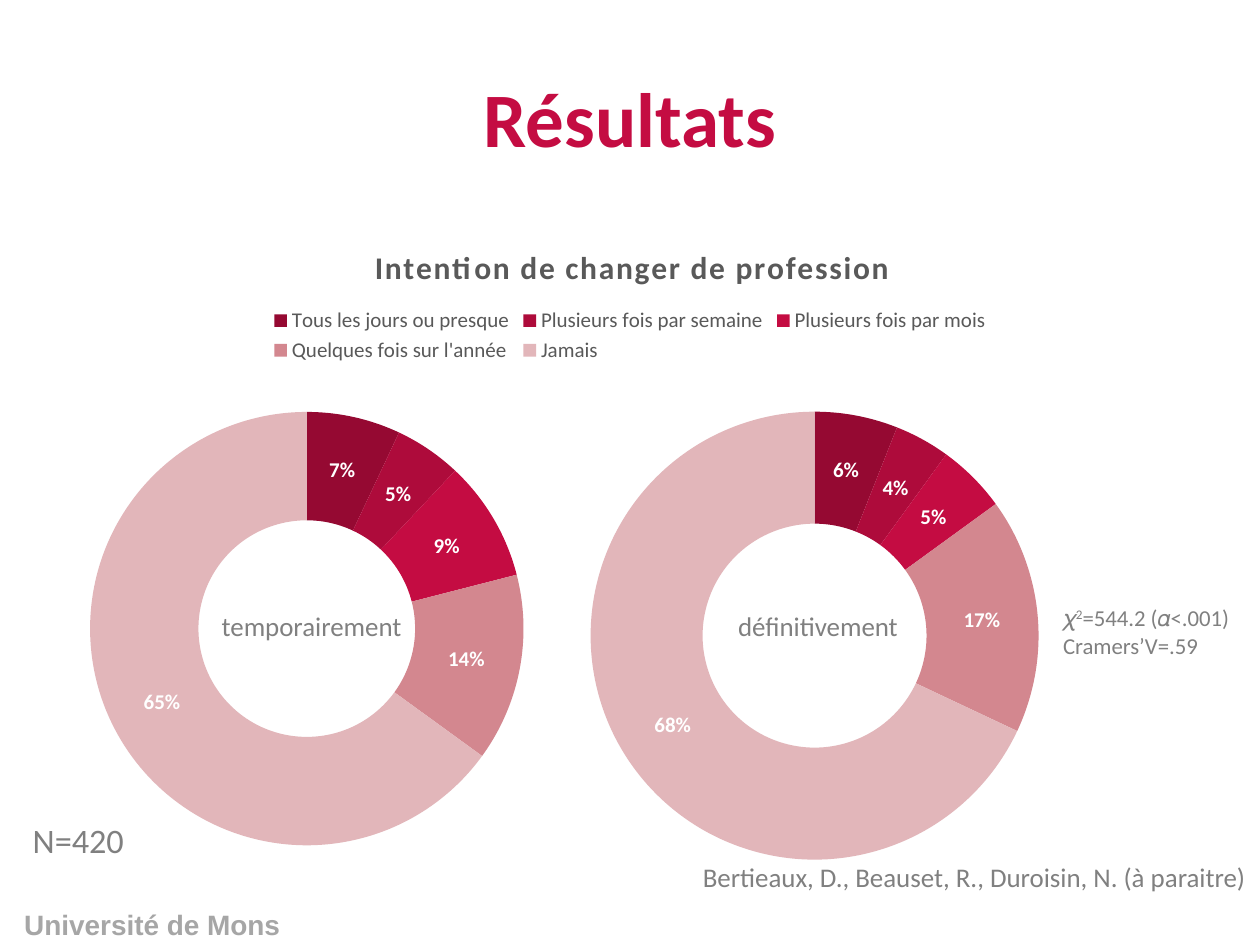
from lxml import etree
from pptx import Presentation
from pptx import util as u
from pptx.chart.data import CategoryChartData
from pptx.dml.color import RGBColor
from pptx.enum import chart as ch, text as tx
from pptx.oxml import parse_xml
from pptx.oxml.ns import nsdecls, qn

INK = {"red": "C40C42", "gray": "808080", "dark": "595959", "pale": "A6A6A6",
       "white": "FFFFFF", "black": "000000"}
RINGS = ["950932", "AE0B3B", "C40C42", "D3878F", "E2B6BA"]
NAMES = ["Tous les jours ou presque", "Plusieurs fois par semaine",
         "Plusieurs fois par mois", "Quelques fois sur l'année", "Jamais"]


def style(font, size, ink, bold=False, face="Calibri"):
    """Set the look of a font."""
    font.name, font.size, font.bold = face, u.Pt(size), bold
    font.color.rgb = RGBColor.from_string(INK[ink])


def write(frame, lines, size=15.4, ink="gray", bold=False, face="Calibri",
          align=None, gap=None):
    """Fill a frame with lines, each a list of (text, baseline) runs."""
    for i, line in enumerate(lines):
        para = frame.paragraphs[0] if i == 0 else frame.add_paragraph()
        para.alignment = align
        if gap:
            para.line_spacing = gap
        for words, base in line:
            run = para.add_run()
            run.text = words
            style(run.font, size, ink, bold, face)
            if base:
                run.font._element.set("baseline", str(base))


def place(node, x, y, w=None, h=None, inner=False):
    """Give a chart part a manual layout in fractions of the chart."""
    for old in node.findall(qn("c:layout")):
        node.remove(old)
    bits = [("layoutTarget", "inner")] if inner else []
    bits += [("xMode", "edge"), ("yMode", "edge"), ("x", x), ("y", y)]
    if w:
        bits += [("w", w), ("h", h)]
    lay = etree.Element(qn("c:layout"))
    man = etree.SubElement(lay, qn("c:manualLayout"))
    for tag, val in bits:
        etree.SubElement(man, qn("c:" + tag)).set("val", str(val))
    if inner:
        node.insert(0, lay)
    else:
        node[0].addnext(lay)


class Deck:
    """Hold the presentation and its current slide."""

    def __init__(self):
        """Open a deck with one title-only slide."""
        self.prs = Presentation()
        self.prs.slide_width, self.prs.slide_height = u.Cm(25.4), u.Cm(19.05)
        self.slide = self.prs.slides.add_slide(self.prs.slide_layouts[5])

    def title(self, words, box):
        """Move and fill the title."""
        head = self.slide.shapes.title
        head.left, head.top, head.width, head.height = map(u.Cm, box)
        head.text_frame.vertical_anchor = tx.MSO_ANCHOR.MIDDLE
        write(head.text_frame, [[(words, 0)]], size=44, ink="red", bold=True,
              align=tx.PP_ALIGN.CENTER)

    def text(self, lines, box, wrap=False, **look):
        """Add a text box."""
        frame = self.slide.shapes.add_textbox(*map(u.Cm, box)).text_frame
        frame.word_wrap = wrap
        if isinstance(lines, str):
            lines = [[(lines, 0)]]
        write(frame, lines, **look)

    def ring(self, names, vals, box, plot):
        """Add a doughnut chart and return it."""
        data = CategoryChartData()
        data.categories = names
        data.add_series("Series 1", vals)
        chart = self.slide.shapes.add_chart(
            ch.XL_CHART_TYPE.DOUGHNUT, *map(u.Cm, box), data).chart
        style(chart.font, 10, "black")
        chart.has_title = chart.has_legend = False
        part = chart.plots[0]
        part.vary_by_categories = True
        for hole in part._element.iter(qn("c:holeSize")):
            hole.set("val", "50")
        for i, tint in enumerate(RINGS):
            look = part.series[0].points[i].format
            look.fill.solid()
            look.fill.fore_color.rgb = RGBColor.from_string(tint)
            look.line.fill.background()
        part.has_data_labels = True
        tags = part.data_labels
        tags.show_percentage, tags.show_value = True, False
        tags.number_format, tags.number_format_is_linked = "0%", False
        style(tags.font, 12, "white", True)
        root = chart._chartSpace
        place(root.chart.plotArea, *plot, inner=True)
        root.chart.addnext(parse_xml(
            f"<c:spPr {nsdecls('c', 'a')}><a:noFill/><a:ln><a:noFill/></a:ln></c:spPr>"))
        return chart

    def head(self, chart, words):
        """Give a chart its title and a legend on top."""
        chart.has_title = chart.has_legend = True
        frame = chart.chart_title.text_frame
        write(frame, [[(words, 0)]], size=18, ink="dark", bold=True)
        frame.paragraphs[0].runs[0].font._element.set("spc", "100")
        place(chart.chart_title._element, 0.27, 0.03)
        key = chart.legend
        key.position = ch.XL_LEGEND_POSITION.TOP
        key.include_in_layout = False
        style(key.font, 12, "dark")
        place(key._element, 0.18, 0.13, 0.64, 0.1)


def main():
    """Build and save the slide."""
    deck = Deck()
    deck.text("Université de Mons", (-0.03, 18.17, 6.2, 0.86), wrap=True, size=16,
              ink="pale", bold=True, face="Arial", align=tx.PP_ALIGN.CENTER)
    deck.ring(["1", "2", "3", "4", "5"], [6, 4, 5, 17, 68],
              (8.46, 7.52, 16.94, 11.15), (0.2, 0.07, 0.54, 0.81))
    left = deck.ring(NAMES, [7, 5, 9, 14, 65],
                     (1.27, 4.45, 22.86, 12.85), (0.02, 0.3, 0.39, 0.68))
    deck.head(left, "Intention de changer de profession")
    deck.title("Résultats", (1.27, 0.76, 22.86, 3.18))
    deck.text("N=420", (0.41, 16.56, 2.57, 0.94), size=19.6, gap=0.8)
    for words, x, y, w in [
            ("temporairement", 4.22, 12.29, 4.3),
            ("définitivement", 14.63, 12.29, 3.9),
            ("Bertieaux, D., Beauset, R., Duroisin, N. (à paraitre)", 13.92, 17.35, 11.48)]:
        deck.text(words, (x, y, w, 0.81), gap=0.8)
    deck.text([[("𝜒", 0), ("2", 30000), ("=544.2 (𝛼<.001)", 0)],
               [("Cramers’V=.59", 0)]],
              (21.18, 12.05, 4.22, 1.9), wrap=True, size=13)
    deck.prs.save("out.pptx")


if __name__ == "__main__":
    main()
